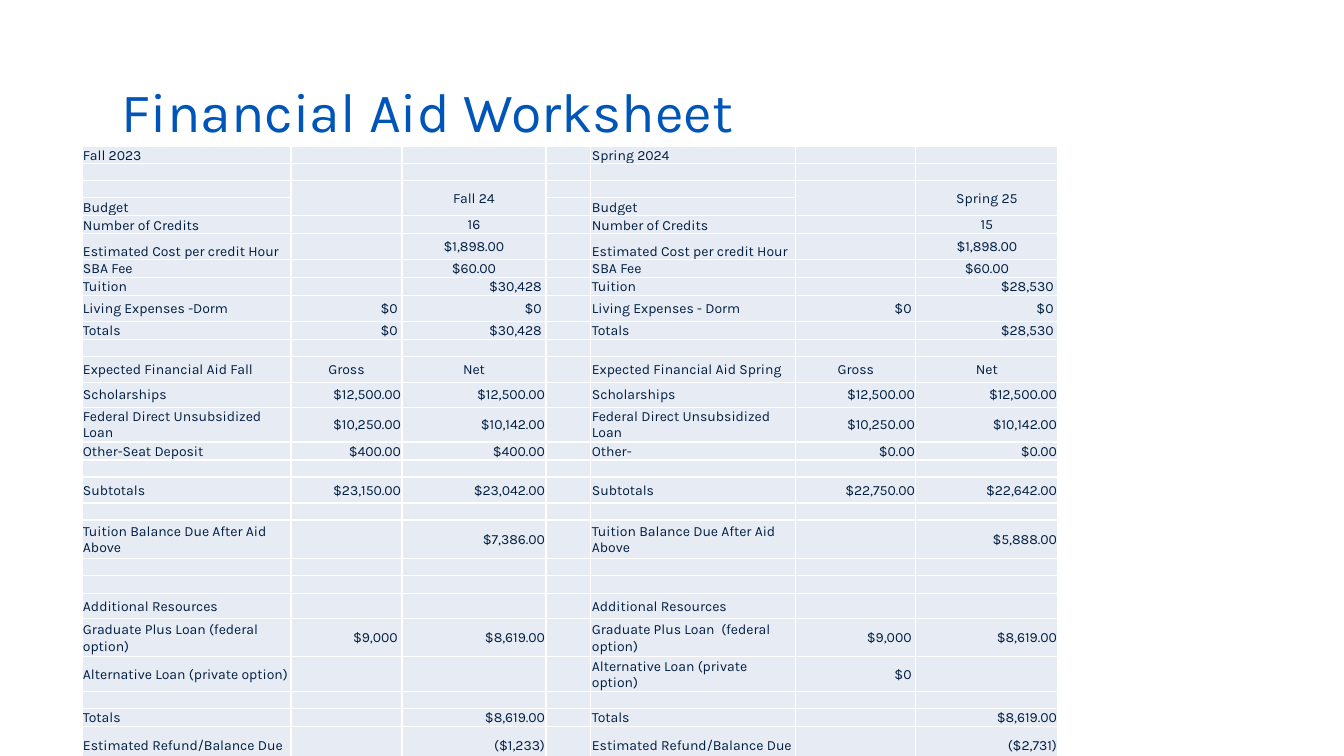
from lxml.etree import SubElement
from pptx import Presentation
from pptx.dml.color import RGBColor
from pptx.enum.text import MSO_ANCHOR, PP_ALIGN
from pptx.oxml.ns import qn
from pptx.util import Pt

PX = 914400 / 100.8
INK, BLUE, PALE, WHITE = "011E41", "0055B8", "E7EBF3", "FFFFFF"


def px(n):
    return round(n * PX)


def style(item, text, size, hue, **form):
    """Write text into a paragraph and set its format values."""
    run = item.add_run()
    run.text = text
    for name, value in {"name": "Karla", "size": Pt(size)}.items():
        setattr(run.font, name, value)
    run.font.color.rgb = RGBColor.from_string(hue)
    for name, value in form.items():
        setattr(item, name, value)


deck = Presentation()
deck.slide_width, deck.slide_height = px(1344), px(756)
slide = deck.slides.add_slide(deck.slide_layouts[6])

title = slide.shapes.add_textbox(px(112), px(84), px(1165), px(61)).text_frame
title.word_wrap = True
title.vertical_anchor = MSO_ANCHOR.MIDDLE
style(title.paragraphs[0], "Financial Aid Worksheet", 39.6, BLUE, line_spacing=0.9)

# Row height, then label, gross and net for fall and for spring
gap = ("", "", "")
rows = [
    (17, ("Fall 2023", "", ""), ("Spring 2024", "", "")),
    (17, gap, gap),
    (17, ("", "", "Fall 24"), ("", "", "Spring 25")),
    (18, ("Budget", "", ""), ("Budget", "", "")),
    (17, ("Number of Credits", "", "16"), ("Number of Credits", "", "15")),
    (26, ("Estimated Cost per credit Hour", "", "$1,898.00"),
     ("Estimated Cost per credit Hour", "", "$1,898.00")),
    (17, ("SBA Fee", "", "$60.00"), ("SBA Fee", "", "$60.00")),
    (18, ("Tuition", "", "$30,428 "), ("Tuition", "", "$28,530 ")),
    (26, ("Living Expenses -Dorm", "$0 ", "$0 "),
     ("Living Expenses - Dorm", "$0 ", "$0 ")),
    (17, ("Totals", "$0 ", "$30,428 "), ("Totals", "", "$28,530 ")),
    (17, gap, gap),
    (26, ("Expected Financial Aid Fall", "Gross", "Net"),
     ("Expected Financial Aid Spring", "Gross", "Net")),
    (25, ("Scholarships", "$12,500.00", "$12,500.00"),
     ("Scholarships", "$12,500.00", "$12,500.00")),
    (33, ("Federal Direct Unsubsidized Loan", "$10,250.00", "$10,142.00"),
     ("Federal Direct Unsubsidized Loan", "$10,250.00", "$10,142.00")),
    (18, ("Other-Seat Deposit", "$400.00", "$400.00"),
     ("Other-", "$0.00", "$0.00")),
    (17, gap, gap),
    (26, ("Subtotals", "$23,150.00", "$23,042.00"),
     ("Subtotals", "$22,750.00", "$22,642.00")),
    (17, gap, gap),
    (39, ("Tuition Balance Due After Aid Above", "", "$7,386.00"),
     ("Tuition Balance Due After Aid Above", "", "$5,888.00")),
    (17, gap, gap),
    (18, gap, gap),
    (25, ("Additional Resources", "", ""), ("Additional Resources", "", "")),
    (38, ("Graduate Plus Loan (federal option)", "$9,000 ", "$8,619.00"),
     ("Graduate Plus Loan  (federal option)", "$9,000 ", "$8,619.00")),
    (34, ("Alternative Loan (private option)", "", ""),
     ("Alternative Loan (private option)", "$0 ", "")),
    (17, gap, gap),
    (18, ("Totals", "", "$8,619.00"), ("Totals", "", "$8,619.00")),
    (38, ("Estimated Refund/Balance Due", "", "($1,233)"),
     ("Estimated Refund/Balance Due", "", "($2,731)")),
]
widths = [209, 111, 144, 45, 205, 120, 142]
labels = (0, 4)
centred = (2, 3, 4, 5, 6, 11)
lows = range(7)  # rows whose labels sit at the bottom
pads = {"margin_left": px(1), "margin_right": px(1),
        "margin_top": px(1), "margin_bottom": 0}

table = slide.shapes.add_table(len(rows), len(widths), px(82), px(146),
                               px(sum(widths)), px(sum(r[0] for r in rows))).table
table.first_row = table.horz_banding = False
for col, wide in zip(table.columns, widths):
    col.width = px(wide)

for i, (high, fall, spring) in enumerate(rows):
    table.rows[i].height = px(high)
    for j, text in enumerate((*fall, "", *spring)):
        cell = table.cell(i, j)
        for name, value in pads.items():
            setattr(cell, name, value)
        low = j in labels and i in lows
        cell.vertical_anchor = MSO_ANCHOR.BOTTOM if low else MSO_ANCHOR.MIDDLE
        props = cell._tc.get_or_add_tcPr()
        for side in ("lnL", "lnR", "lnT", "lnB"):
            line = SubElement(props, qn("a:" + side), w=str(Pt(1)))
            paint = SubElement(line, qn("a:solidFill"))
            SubElement(paint, qn("a:srgbClr"), val=WHITE)
        cell.fill.solid()
        cell.fill.fore_color.rgb = RGBColor.from_string(PALE)
        para = cell.text_frame.paragraphs[0]
        if text:
            side = (PP_ALIGN.LEFT if j in labels else
                    PP_ALIGN.CENTER if i in centred else PP_ALIGN.RIGHT)
            style(para, text, 10, INK, alignment=side)
        else:
            SubElement(para._p, qn("a:endParaRPr"), sz="800")

for j in (1, 2, 5, 6):
    table.cell(2, j).merge(table.cell(3, j))

deck.save("out.pptx")
